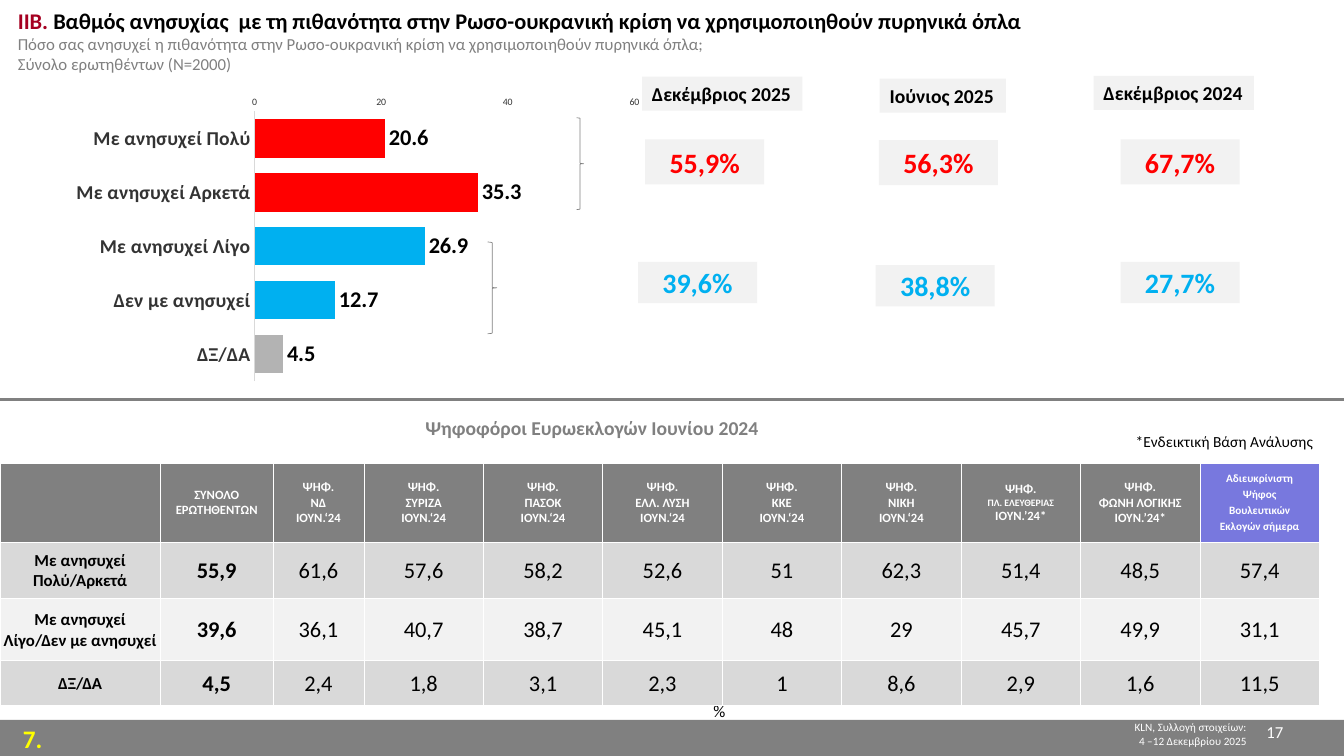
from lxml import etree
from pptx import Presentation
from pptx.chart.data import CategoryChartData
from pptx.dml.color import RGBColor
from pptx.enum.chart import XL_CHART_TYPE as ChartType, XL_LABEL_POSITION as LabelPos
from pptx.enum.chart import XL_TICK_MARK as TickMark
from pptx.enum.shapes import MSO_CONNECTOR as Connector, MSO_SHAPE as Shape
from pptx.enum.text import MSO_ANCHOR as Anchor, PP_ALIGN as Align
from pptx.oxml import parse_xml
from pptx.oxml.ns import nsdecls, qn
from pptx.util import Cm, Pt

COLORS = {"white": "FFFFFF", "black": "000000", "gray": "808080", "wine": "A50021",
          "yellow": "FFFF00", "red": "FF0000", "blue": "00B0F0", "silver": "B3B3B3",
          "band": "D9D9D9", "pale": "F2F2F2", "violet": "7878DE", "ink": "333333"}
FONT = "Calibri"

# Content
TITLE = [("ΙΙΒ. ", "wine"),
         ("Βαθμός ανησυχίας  με τη πιθανότητα στην Ρωσο-ουκρανική κρίση "
          "να χρησιμοποιηθούν πυρηνικά όπλα", "black")]
QUESTION = ["Πόσο σας ανησυχεί η πιθανότητα στην Ρωσο-ουκρανική κρίση "
            "να χρησιμοποιηθούν πυρηνικά όπλα;", "Σύνολο ερωτηθέντων (Ν=2000)"]
ANSWERS = [("Με ανησυχεί Πολύ", 20.6, "red"), ("Με ανησυχεί Αρκετά", 35.3, "red"),
           ("Με ανησυχεί Λίγο", 26.9, "blue"), ("Δεν με ανησυχεί", 12.7, "blue"),
           ("ΔΞ/ΔΑ", 4.5, "silver")]
# (text, left, top) of each label and total; label width first
PERIODS = [
    (4.04, ("Δεκέμβριος 2025", 16.18, 1.93), ("55,9%", 16.26, 3.51), ("39,6%", 16.08, 6.6)),
    (3.18, ("Ιούνιος 2025", 22.17, 1.98), ("56,3%", 22.15, 3.53), ("38,8%", 22.07, 6.68)),
    (4.04, ("Δεκέμβριος 2024", 27.56, 1.91), ("67,7%", 28.24, 3.51), ("27,7%", 28.24, 6.6)),
]
BRACES = [(14.53, 2.97, 0.18, 2.31), (12.29, 6.1, 0.23, 2.31)]
PARTIES = [("NΔ", "ΙΟΥΝ.‘24"), ("ΣΥΡΙΖΑ", "ΙΟΥΝ.‘24"), ("ΠΑΣΟΚ", "ΙΟΥΝ.‘24"),
           ("ΕΛΛ. ΛΥΣΗ", "ΙΟΥΝ.‘24"), ("ΚΚΕ", "ΙΟΥΝ.‘24"), ("ΝΙΚΗ", "ΙΟΥΝ.‘24"),
           ("ΠΛ. ΕΛΕΥΘΕΡΙΑΣ", "ΙΟΥΝ.’24*"), ("ΦΩΝΗ ΛΟΓΙΚΗΣ", "ΙΟΥΝ.’24*")]
UNDECIDED = ["Αδιευκρίνιστη", "Ψήφος", "Βουλευτικών", "Εκλογών σήμερα"]
HEADERS = [[], ["ΣΥΝΟΛΟ", "ΕΡΩΤΗΘΕΝΤΩΝ"], *(["ΨΗΦ.", *party] for party in PARTIES), UNDECIDED]
ROWS = [
    ("Με ανησυχεί Πολύ/Αρκετά", "55,9", "61,6", "57,6", "58,2", "52,6", "51", "62,3",
     "51,4", "48,5", "57,4"),
    ("Με ανησυχεί Λίγο/Δεν με ανησυχεί", "39,6", "36,1", "40,7", "38,7", "45,1", "48", "29",
     "45,7", "49,9", "31,1"),
    ("ΔΞ/ΔΑ", "4,5", "2,4", "1,8", "3,1", "2,3", "1", "8,6", "2,9", "1,6", "11,5"),
]
COLUMN_WIDTHS = [4.04, 2.84, 2.29] + [3.01] * 8
ROW_HEIGHTS = [1.98, 1.42, 1.57, 1.12]
PLOT = {"x": 0.321, "y": 0.127, "w": 0.623, "h": 0.802}

deck = Presentation()
deck.slide_width, deck.slide_height = Cm(33.87), Cm(19.05)
page = deck.slides.add_slide(deck.slide_layouts[6])


def rgb(name):
    return RGBColor.from_string(COLORS[name])


def set_font(font, size, color, bold=False):
    font.name, font.size, font.bold = FONT, Pt(size), bold
    font.color.rgb = rgb(color)


def write(frame, lines, size, color, bold=False, align=Align.LEFT):
    for index, line in enumerate(lines):
        para = frame.paragraphs[0] if index == 0 else frame.add_paragraph()
        para.text, para.alignment = line, align
        set_font(para.font, size, color, bold)


def add_text(area, lines, size, color, bold=False, align=Align.LEFT, wrap=True):
    box = page.shapes.add_textbox(*map(Cm, area))
    box.text_frame.word_wrap = wrap
    write(box.text_frame, lines, size, color, bold, align)


def add_box(area, fill, anchor=Anchor.TOP, wrap=True):
    box = page.shapes.add_shape(Shape.RECTANGLE, *map(Cm, area))
    box.shadow.inherit = False
    box.fill.solid()
    box.fill.fore_color.rgb = rgb(fill)
    box.line.fill.background()
    box.text_frame.word_wrap, box.text_frame.vertical_anchor = wrap, anchor
    return box.text_frame


def style_cell(cell, fill, margins):
    cell.margin_left, cell.margin_top, cell.margin_right, cell.margin_bottom = map(Cm, margins)
    cell.vertical_anchor = Anchor.MIDDLE
    properties = cell._tc.get_or_add_tcPr()
    for side in ("lnL", "lnR", "lnT", "lnB"):
        properties.append(parse_xml(
            f'<a:{side} {nsdecls("a")} w="6350"><a:solidFill>'
            f'<a:srgbClr val="{COLORS["white"]}"/></a:solidFill></a:{side}>'))
    cell.fill.solid()
    cell.fill.fore_color.rgb = rgb(fill)


# Footer
add_box((0, 18.14, 33.87, 0.91), "gray")
add_text((24.33, 18.03, 7.34, 0.94), ["KLN, Συλλογή στοιχείων:", "4 –12 Δεκεμβρίου 2025"],
         8, "white", align=Align.RIGHT)
add_text((0.33, 18.11, 1.7, 0.94), ["7."], 18, "yellow", True)
add_text((17.73, 17.53, 0.81, 0.76), ["%"], 12, "black", wrap=False)
add_text((25.53, 18.06, 7.06, 0.99), ["17"], 12, "white", align=Align.RIGHT)

# Title and question
heading = add_box((0.2, 0.05, 33.07, 2.31), "white")
write(heading, ["", *QUESTION], 12, "gray")
for text, color in TITLE:
    span = heading.paragraphs[0].add_run()
    span.text = text
    set_font(span.font, 16, color, True)

# Voter table
add_text((6.55, 10.36, 16.74, 0.86), ["Ψηφοφόροι Ευρωεκλογών Ιουνίου 2024"],
         14, "gray", True, Align.CENTER)
table = page.shapes.add_table(len(ROWS) + 1, len(HEADERS), Cm(0), Cm(11.68),
                              Cm(sum(COLUMN_WIDTHS)), Cm(sum(ROW_HEIGHTS))).table
table.first_row = table.horz_banding = False
for column, width in zip(table.columns, COLUMN_WIDTHS):
    column.width = Cm(width)
for row, height in zip(table.rows, ROW_HEIGHTS):
    row.height = Cm(height)
for index, lines in enumerate(HEADERS):
    cell = table.cell(0, index)
    undecided = lines is UNDECIDED
    style_cell(cell, "violet" if undecided else "gray", (0.25, 0.13, 0.25, 0.13))
    write(cell.text_frame, lines, 8 if undecided else 9, "white", True, Align.CENTER)
    for para in cell.text_frame.paragraphs:
        if para.text == "ΠΛ. ΕΛΕΥΘΕΡΙΑΣ":
            para.font.size = Pt(7)
    if undecided:
        for para in cell.text_frame.paragraphs[1:]:
            para.space_before = Pt(1.6)
for row_index, values in enumerate(ROWS, 1):
    for index, value in enumerate(values):
        cell = table.cell(row_index, index)
        style_cell(cell, "band" if row_index % 2 else "pale", (0.03, 0.03, 0.03, 0))
        write(cell.text_frame, [value], 16 if index else 12, "black", index < 2, Align.CENTER)

# Answer chart
data = CategoryChartData()
data.categories = [name for name, _, _ in ANSWERS]
data.add_series("Series 1", [value for _, value, _ in ANSWERS])
chart = page.shapes.add_chart(ChartType.BAR_CLUSTERED, Cm(-1.8), Cm(1.73), Cm(25.6), Cm(8.48),
                              data).chart
chart.has_legend = chart.has_title = False
set_font(chart.font, 14, "black", True)
categories, scale = chart.category_axis, chart.value_axis
categories.reverse_order = True
set_font(categories.tick_labels.font, 14, "ink", True)
categories.format.line.color.rgb = rgb("band")
categories.format.line.width = Pt(0.75)
set_font(scale.tick_labels.font, 7, "ink")
scale.format.line.fill.background()
scale.minimum_scale, scale.maximum_scale, scale.major_unit = 0, 100, 20
scale.has_major_gridlines = False
for axis in (categories, scale):
    axis.major_tick_mark = axis.minor_tick_mark = TickMark.NONE
plot = chart.plots[0]
plot.gap_width, plot.overlap, plot.vary_by_categories = 40, -51, False
plot.has_data_labels = True
labels = plot.data_labels
labels.show_value, labels.position = True, LabelPos.OUTSIDE_END
set_font(labels.font, 16, "black", True)
for index, (_, _, color) in enumerate(ANSWERS):
    bar = plot.series[0].points[index].format.fill
    bar.solid()
    bar.fore_color.rgb = rgb(color)
area = chart._chartSpace.find(".//" + qn("c:plotArea"))
for old in area.findall(qn("c:layout")):
    area.remove(old)
layout = parse_xml(f'<c:layout {nsdecls("c")}><c:manualLayout/></c:layout>')
settings = [("layoutTarget", "inner"), ("xMode", "edge"), ("yMode", "edge"), *PLOT.items()]
for tag, value in settings:
    etree.SubElement(layout[0], qn("c:" + tag)).set("val", str(value))
area.insert(0, layout)

# Divider and braces
divider = page.shapes.add_connector(Connector.STRAIGHT, Cm(0), Cm(10.06), Cm(33.87), Cm(10.06))
divider.line.color.rgb, divider.line.width = rgb("gray"), Pt(2.25)
etree.SubElement(divider._element.spPr, qn("a:effectLst"))
for place in BRACES:
    brace = page.shapes.add_shape(Shape.RIGHT_BRACE, *map(Cm, place))
    brace.shadow.inherit = False
    brace.fill.background()
    brace.line.color.rgb, brace.line.width = rgb("gray"), Pt(0.5)

# Totals by period
for label_width, (label, left, top), worried, calm in PERIODS:
    write(add_box((left, top, label_width, 0.86), "pale", wrap=False), [label], 14, "black", True)
    for (total, x, y), height, color in ((worried, 1.14, "red"), (calm, 1.04, "blue")):
        frame = add_box((x, y, 3, height), "pale", Anchor.MIDDLE, wrap=False)
        write(frame, [total], 20, color, True, Align.CENTER)
add_text((28.37, 10.77, 5.11, 0.74), ["*Ενδεικτική Βάση Ανάλυσης"], 11, "black", wrap=False)

deck.save("out.pptx")
